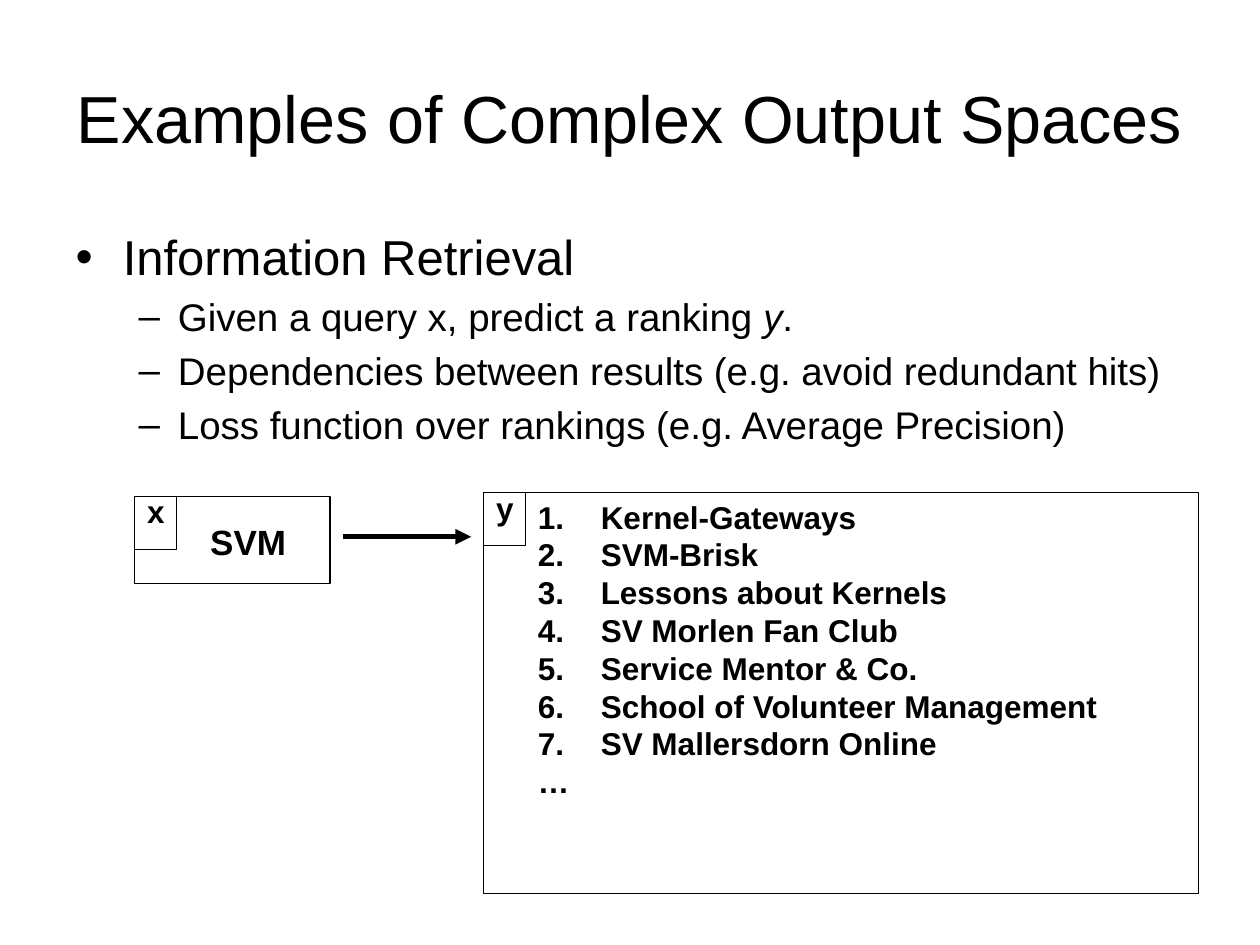
from lxml import etree
from pptx import Presentation
from pptx.dml.color import RGBColor
from pptx.enum.shapes import MSO_CONNECTOR, MSO_SHAPE
from pptx.enum.text import MSO_ANCHOR, MSO_AUTO_SIZE, PP_ALIGN
from pptx.oxml.ns import qn
from pptx.util import Inches, Pt

RECT = MSO_SHAPE.RECTANGLE
STRAIGHT = MSO_CONNECTOR.STRAIGHT
NO_AUTOFIT = MSO_AUTO_SIZE.NONE
MIDDLE = MSO_ANCHOR.MIDDLE
CENTER = PP_ALIGN.CENTER
BLACK = RGBColor(0x00, 0x00, 0x00)
WHITE = RGBColor(0xFF, 0xFF, 0xFF)
FONT = "Arial"
SLIDE_W, SLIDE_H = 10, 7.5
MARGIN = 0.05 * SLIDE_W
TAG_W, TAG_H = 0.33, 0.42
QUERY = (1.07, 3.94, 1.55, 0.69)
RANKING = (3.84, 3.91, 5.67, 3.18)
ARROW_GAP = 0.1
ARROW_Y = 4.26

POINTS = [
    [("Given a query x, predict a ranking ", False), ("y", True), (".", False)],
    [("Dependencies between results (e.g. avoid redundant hits)", False)],
    [("Loss function over rankings (e.g. Average Precision)", False)],
]
RESULTS = [
    "Kernel-Gateways",
    "SVM-Brisk",
    "Lessons about Kernels",
    "SV Morlen Fan Club",
    "Service Mentor & Co.",
    "School of Volunteer Management",
    "SV Mallersdorn Online",
]


def add_run(p, text, size=18, bold=False, italic=False):
    r = p.add_run()
    r.text = text
    r.font.name, r.font.size = FONT, Pt(size)
    r.font.bold, r.font.italic = bold, italic
    r.font.color.rgb = BLACK


def place(sp, left, top, width, height):
    sp.left, sp.top = Inches(left), Inches(top)
    sp.width, sp.height = Inches(width), Inches(height)


def next_paragraph(tf):
    """Return the first paragraph while it is empty, else a new one."""
    first = tf.paragraphs[0]
    return tf.add_paragraph() if first.runs else first


def add_title(s, text):
    sp = s.shapes.title
    place(sp, MARGIN, 0.04 * SLIDE_H, SLIDE_W - 2 * MARGIN, 1.25)
    tf = sp.text_frame
    tf.auto_size, tf.vertical_anchor = NO_AUTOFIT, MIDDLE
    p = tf.paragraphs[0]
    p.alignment = CENTER
    add_run(p, text, size=38)


def add_body(s, heading, points):
    sp = s.placeholders[1]
    place(sp, MARGIN, 1.75, SLIDE_W - 2 * MARGIN, 4.95)
    tf = sp.text_frame
    tf.auto_size = NO_AUTOFIT
    add_run(tf.paragraphs[0], heading, size=28)
    for runs in points:
        p = tf.add_paragraph()
        p.level, p.space_before = 1, Pt(4.4)
        for text, italic in runs:
            add_run(p, text, size=22, italic=italic)


def add_box(s, left, top, width, height, filled=True):
    sp = s.shapes.add_shape(RECT, Inches(left), Inches(top), Inches(width), Inches(height))
    sp.shadow.inherit = False
    sp.line.color.rgb, sp.line.width = BLACK, Pt(0.75)
    if not filled:
        sp.fill.background()
        return
    sp.fill.solid()
    sp.fill.fore_color.rgb = WHITE
    color = sp._element.spPr.find(qn("a:solidFill"))[0]
    etree.SubElement(color, qn("a:alpha"), val="50000")


def add_text_box(s, left, top, width, height, wrap=False):
    sp = s.shapes.add_textbox(Inches(left), Inches(top), Inches(width), Inches(height))
    sp.text_frame.word_wrap = wrap
    return sp.text_frame


def add_tagged_box(s, tag, area):
    """Draw a box with a small lettered box in its top left corner."""
    left, top = area[:2]
    add_box(s, *area)
    add_box(s, left, top, TAG_W, TAG_H, filled=False)
    tf = add_text_box(s, left, top - 0.08, 0.37, 0.5)
    add_run(tf.paragraphs[0], tag, bold=True)


def add_ranking(s, results):
    left, top, width, height = RANKING
    tf = add_text_box(s, left + TAG_W, top - 0.01, width - TAG_W - 0.1, height, wrap=True)
    for text in results + ["…"]:
        p = next_paragraph(tf)
        p.line_spacing = Pt(21.6)
        add_run(p, text, bold=True)
        if text in results:
            pPr = p._p.get_or_add_pPr()
            pPr.set("marL", str(Inches(0.5)))
            pPr.set("indent", str(-Inches(0.5)))
            etree.SubElement(pPr, qn("a:buFont"), typeface=FONT)
            etree.SubElement(pPr, qn("a:buAutoNum"), type="arabicPeriod")


def add_arrow(s, start, end, y):
    c = s.shapes.add_connector(STRAIGHT, Inches(start), Inches(y), Inches(end), Inches(y))
    c.line.color.rgb, c.line.width = BLACK, Pt(3)
    etree.SubElement(c.line._get_or_add_ln(), qn("a:tailEnd"), type="triangle")
    etree.SubElement(c._element.spPr, qn("a:effectLst"))


def main():
    prs = Presentation()
    prs.slide_width, prs.slide_height = Inches(SLIDE_W), Inches(SLIDE_H)
    s = prs.slides.add_slide(prs.slide_layouts[1])
    add_title(s, "Examples of Complex Output Spaces")
    add_body(s, "Information Retrieval", POINTS)

    add_tagged_box(s, "x", QUERY)
    query = add_text_box(s, QUERY[0] + 0.5, QUERY[1] + 0.14, 0.8, 0.43)
    add_run(query.paragraphs[0], "SVM", size=20, bold=True)
    add_tagged_box(s, "y", RANKING)
    add_ranking(s, RESULTS)
    add_arrow(s, QUERY[0] + QUERY[2] + ARROW_GAP, RANKING[0] - ARROW_GAP, ARROW_Y)
    prs.save("out.pptx")


if __name__ == "__main__":
    main()
